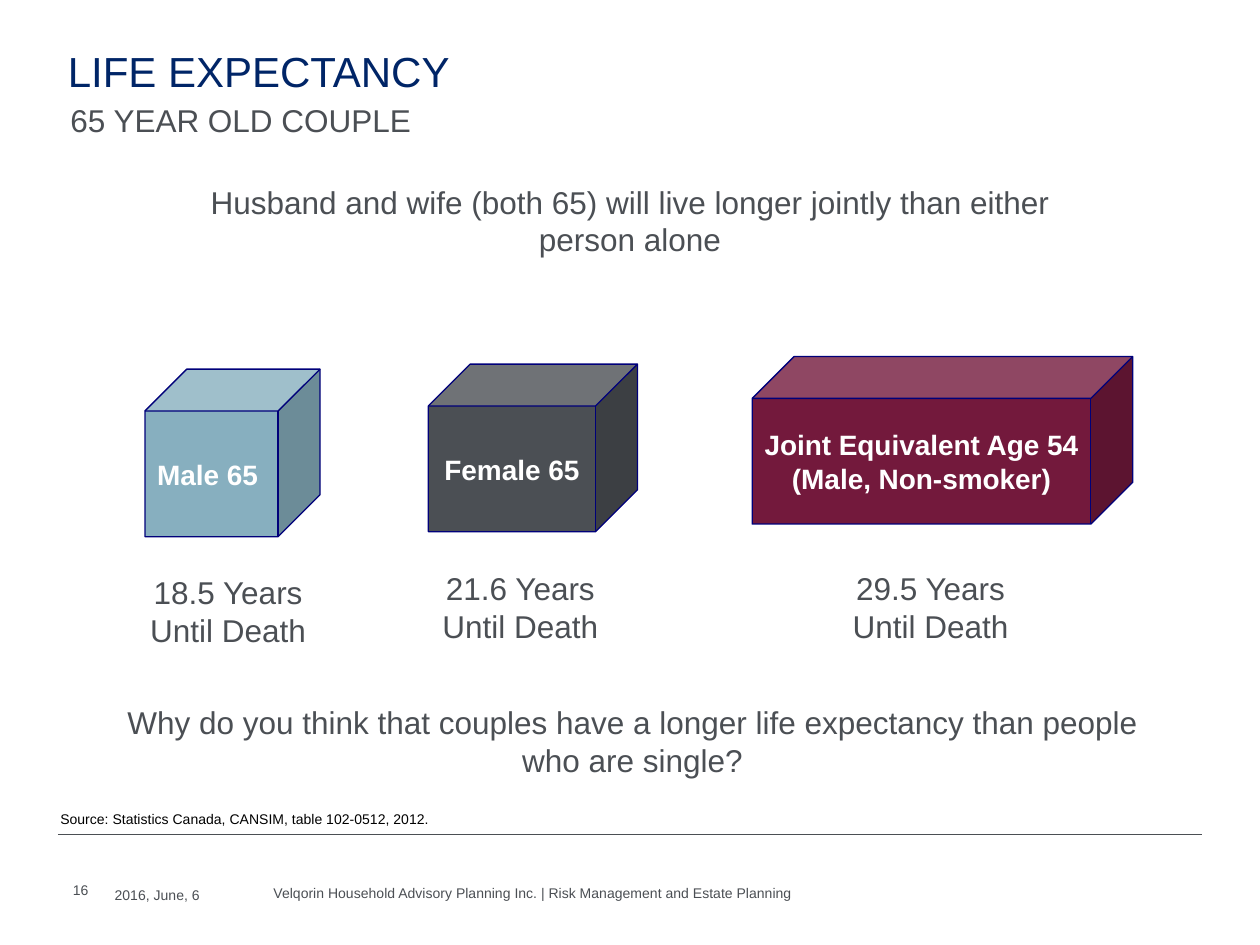
"""Build the life expectancy slide for a 65 year old couple."""
from lxml.etree import SubElement
from pptx import Presentation
from pptx.dml.color import RGBColor
from pptx.enum.shapes import MSO_CONNECTOR as LINE, MSO_SHAPE as SHAPE
from pptx.enum.text import MSO_ANCHOR as ANCHOR, PP_ALIGN as ALIGN
from pptx.oxml.ns import qn
from pptx.util import Inches, Pt

NAVY = RGBColor(0x00, 0x25, 0x67)
EDGE = RGBColor(0x00, 0x00, 0x7A)
GRAY = RGBColor(0x4B, 0x4F, 0x54)
BLUE = RGBColor(0x87, 0xAF, 0xBF)
WINE = RGBColor(0x73, 0x19, 0x3C)
WHITE = RGBColor(0xFF, 0xFF, 0xFF)
BLACK = RGBColor(0x00, 0x00, 0x00)


def write(frame, lines, size, color, align=ALIGN.LEFT, bold=False):
    para = frame.paragraphs[0]
    para.alignment = align
    for i, line in enumerate(lines):
        if i:
            para.add_line_break()
        run = para.add_run()
        run.text = line
        run.font.name = "Arial"
        run.font.size = Pt(size)
        run.font.bold = bold
        run.font.color.rgb = color


def add_text(area, text, size, color=GRAY, align=ALIGN.LEFT, anchor=ANCHOR.TOP, inset=True):
    frame = slide.shapes.add_textbox(*map(Inches, area)).text_frame
    frame.word_wrap = True
    frame.vertical_anchor = anchor
    if not inset:
        frame.margin_left = frame.margin_right = 0
        frame.margin_top = frame.margin_bottom = 0
    write(frame, [text], size, color, align)


prs = Presentation()
prs.slide_width = Inches(10)
prs.slide_height = Inches(7.5)
slide = prs.slides.add_slide(prs.slide_layouts[6])

rule = slide.shapes.add_connector(
    LINE.STRAIGHT, Inches(0.46), Inches(6.62), Inches(9.54), Inches(6.62))
rule.line.color.rgb = GRAY
rule.line.width = Pt(0.5)
SubElement(rule.element.spPr, qn("a:effectLst"))

add_text((0.44, 0.31, 9.09, 0.4), "LIFE EXPECTANCY", 24, NAVY)
add_text((0.46, 0.75, 9.08, 0.41), "65 YEAR OLD COUPLE", 18)
add_text((1.21, 1.4, 7.58, 0.71),
         "Husband and wife (both 65) will live longer jointly than either person alone",
         18, align=ALIGN.CENTER)

cubes = [
    (1.15, 2.93, 1.39, BLUE, ["Male 65 "], "18.5", (1.02, 4.5, 1.58, 0.71)),
    (3.4, 2.89, 1.66, GRAY, ["Female 65"], "21.6", (3.38, 4.47, 1.5, 0.71)),
    (5.97, 2.83, 3.02, WINE, ["Joint Equivalent Age 54", "(Male, Non-smoker)"],
     "29.5", (6.47, 4.47, 1.83, 0.71)),
]
for left, top, width, fill, label, years, area in cubes:
    cube = slide.shapes.add_shape(
        SHAPE.CUBE, Inches(left), Inches(top), Inches(width), Inches(1.33))
    cube.adjustments[0] = 0.25
    cube.shadow.inherit = False
    cube.fill.solid()
    cube.fill.fore_color.rgb = fill
    cube.line.color.rgb = EDGE
    cube.line.width = Pt(0.75)
    cube.text_frame.word_wrap = False
    cube.text_frame.vertical_anchor = ANCHOR.MIDDLE
    write(cube.text_frame, label, 16, WHITE, ALIGN.CENTER, True)
    add_text(area, f"{years} Years Until Death", 18, align=ALIGN.CENTER)

add_text((0.66, 5.53, 8.72, 0.71),
         "Why do you think that couples have a longer life expectancy "
         "than people who are single?", 18, align=ALIGN.CENTER)
add_text((0.38, 6.38, 8.08, 0.24),
         "Source: Statistics Canada, CANSIM, table 102-0512, 2012.", 8, BLACK)
add_text((0.48, 6.95, 0.36, 0.22), "16", 8)
add_text((0.91, 6.95, 1.18, 0.22), "2016, June, 6", 8, anchor=ANCHOR.BOTTOM, inset=False)
add_text((2.17, 6.97, 5.51, 0.23),
         "Velqorin Household Advisory Planning Inc. | "
         "Risk Management and Estate Planning", 8, anchor=ANCHOR.MIDDLE, inset=False)

prs.save("out.pptx")
